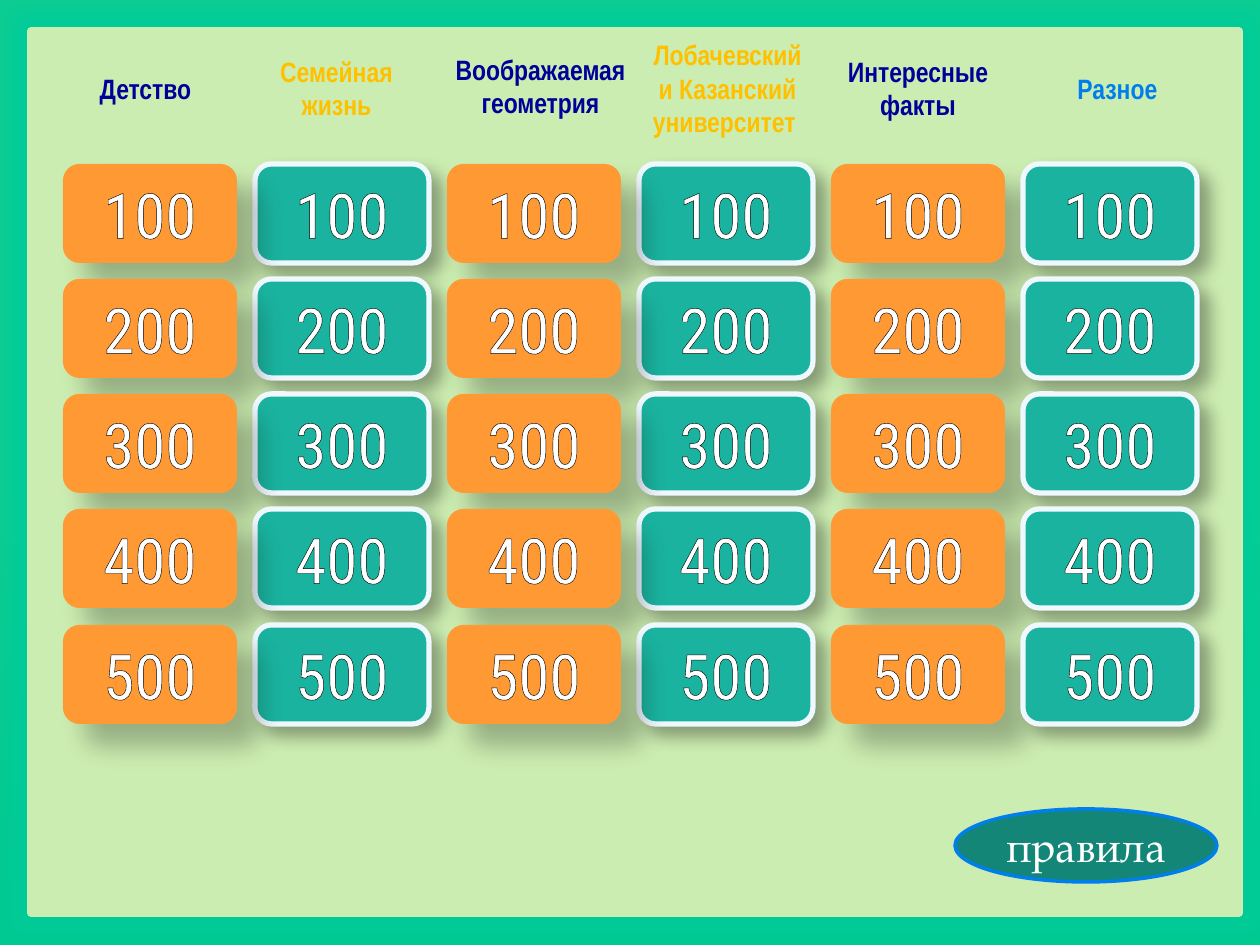
from lxml.etree import SubElement
from pptx import Presentation
from pptx.dml.color import RGBColor
from pptx.enum.shapes import MSO_SHAPE
from pptx.enum.text import MSO_ANCHOR, PP_ALIGN
from pptx.oxml.ns import qn
from pptx.util import Emu, Pt

PX = 914400 // 126
COLUMN_PITCH = 192
TILE_LEFT, TILE_TOP = 63, 164
TILE_WIDTH, TILE_HEIGHT = 174, 99
ROW_SPAN = 461
SCORES = (100, 200, 300, 400, 500)
PAINT_ORDER = (1, 0, 3, 2, 4, 5)

LIME = RGBColor(0x92, 0xD0, 0x50)
GREEN = RGBColor(0x00, 0xB0, 0x50)
MINT = RGBColor(0x00, 0xCC, 0x99)
PALE = RGBColor(0xCC, 0xED, 0xB1)
NAVY = RGBColor(0x00, 0x00, 0x99)
GOLD = RGBColor(0xFF, 0xC0, 0x00)
BLUE = RGBColor(0x00, 0x7E, 0xEB)
TEAL = RGBColor(0x1A, 0xB3, 0x9F)
DEEP_TEAL = RGBColor(0x13, 0x86, 0x77)
ORANGE = RGBColor(0xFF, 0x99, 0x33)
ICE = RGBColor(0xEF, 0xF7, 0xFF)
WHITE = RGBColor(0xFF, 0xFF, 0xFF)
BLACK = RGBColor(0x00, 0x00, 0x00)

HEADINGS = (
    ("Детство", (63, 44, 165, 88), NAVY, None),
    ("Семейная жизнь", (254, 44, 165, 88), GOLD, GOLD),
    ("Воображаемая геометрия", (441, 42, 199, 88), NAVY, None),
    ("Лобачевский и Казанский университет ", (636, 44, 183, 88), GOLD, GOLD),
    ("Интересные факты", (828, 44, 180, 88), NAVY, None),
    ("Разное", (1018, 44, 199, 88), BLUE, GOLD),
)


def scale(*lengths):
    """Turn px lengths into EMU."""
    return [Emu(length * PX) for length in lengths]


def paint_background(page):
    """Fill the page with a vertical gradient that starts halfway down."""
    fill = page.background.fill
    fill.gradient()
    fill.gradient_angle = 270
    for stop, position, color in zip(fill.gradient_stops, (0.5, 1), (LIME, GREEN)):
        stop.position = position
        stop.color.rgb = color


def add_box(page, kind, bounds, color, line=None, line_width=0):
    """Add a preset shape with a flat fill, an optional line and no shadow."""
    box = page.shapes.add_shape(kind, *scale(*bounds))
    box.shadow.inherit = False
    box.fill.solid()
    box.fill.fore_color.rgb = color
    if line is None:
        box.line.fill.background()
    else:
        box.line.color.rgb = line
        box.line.width = Pt(line_width)
    return box


def add_effect(box, name, color, opacity, **settings):
    """Give a shape one effect, such as a glow or an outer shadow."""
    effects = box._element.spPr.find(qn("a:effectLst"))
    effect = SubElement(effects, qn(f"a:{name}"))
    for key, value in settings.items():
        effect.set(key, str(value))
    tint = SubElement(effect, qn("a:srgbClr"), val=str(color))
    SubElement(tint, qn("a:alpha"), val=str(opacity * 1000))


def add_shadow(box, opacity, blur, distance):
    """Cast a black shadow down and to the right."""
    add_effect(box, "outerShdw", BLACK, opacity, blurRad=Pt(blur), dist=Pt(distance),
               dir=45 * 60000, algn="tl", rotWithShape=0)


def outline_text(span, color, width):
    """Draw a coloured outline around the letters."""
    line = SubElement(span._r.get_or_add_rPr(), qn("a:ln"), w=str(Pt(width)))
    fill = SubElement(line, qn("a:solidFill"))
    SubElement(fill, qn("a:srgbClr"), val=str(color))


def write_text(box, text, font_name, size, color, bold=False):
    """Write one centred paragraph in a shape and return its run."""
    frame = box.text_frame
    frame.word_wrap = True
    frame.vertical_anchor = MSO_ANCHOR.MIDDLE
    para = frame.paragraphs[0]
    para.alignment = PP_ALIGN.CENTER
    font = para.font
    font.name, font.size, font.bold = font_name, Pt(size), bold
    font.color.rgb = color
    span = para.add_run()
    span.text = text
    return span


def add_panel(page):
    """Add the pale board with its mint glow."""
    panel = add_box(page, MSO_SHAPE.RECTANGLE, (31, 31, 1208, 882), PALE, PALE, 4.5)
    add_effect(panel, "glow", MINT, 90, rad=Pt(18))


def add_heading(page, text, bounds, color, outline):
    """Add the heading of one column."""
    box = page.shapes.add_textbox(*scale(*bounds))
    span = write_text(box, text, "Arial Narrow", 16, color, bold=True)
    if outline is not None:
        outline_text(span, outline, 0.9)


def add_tile(page, row, column):
    """Add one score tile, orange in even columns and teal in odd ones."""
    left = TILE_LEFT + column * COLUMN_PITCH
    top = TILE_TOP + row * ROW_SPAN // (len(SCORES) - 1)
    bounds = (left, top, TILE_WIDTH, TILE_HEIGHT)
    if column % 2:
        tile = add_box(page, MSO_SHAPE.ROUNDED_RECTANGLE, bounds, TEAL, ICE, 3)
        add_shadow(tile, 35, 10.2, 8)
    else:
        tile = add_box(page, MSO_SHAPE.ROUNDED_RECTANGLE, bounds, ORANGE)
        add_shadow(tile, 26, 15, 18)
    span = write_text(tile, str(SCORES[row]), "Roboto Condensed", 36, WHITE)
    outline_text(span, BLACK, 0.75)


def add_rules_button(page):
    """Add the oval button that leads to the rules."""
    button = add_box(page, MSO_SHAPE.OVAL, (955, 809, 262, 73), DEEP_TEAL, BLUE, 2)
    write_text(button, "правила", "TeX Gyre Pagella", 24, WHITE)


def main():
    """Build the quiz board and save it."""
    deck = Presentation()
    deck.slide_width, deck.slide_height = scale(1260, 945)
    page = deck.slides.add_slide(deck.slide_layouts[6])
    paint_background(page)
    add_panel(page)
    for heading in HEADINGS:
        add_heading(page, *heading)
    for row in range(len(SCORES)):
        for column in PAINT_ORDER:
            add_tile(page, row, column)
    add_rules_button(page)
    deck.save("out.pptx")


if __name__ == "__main__":
    main()
